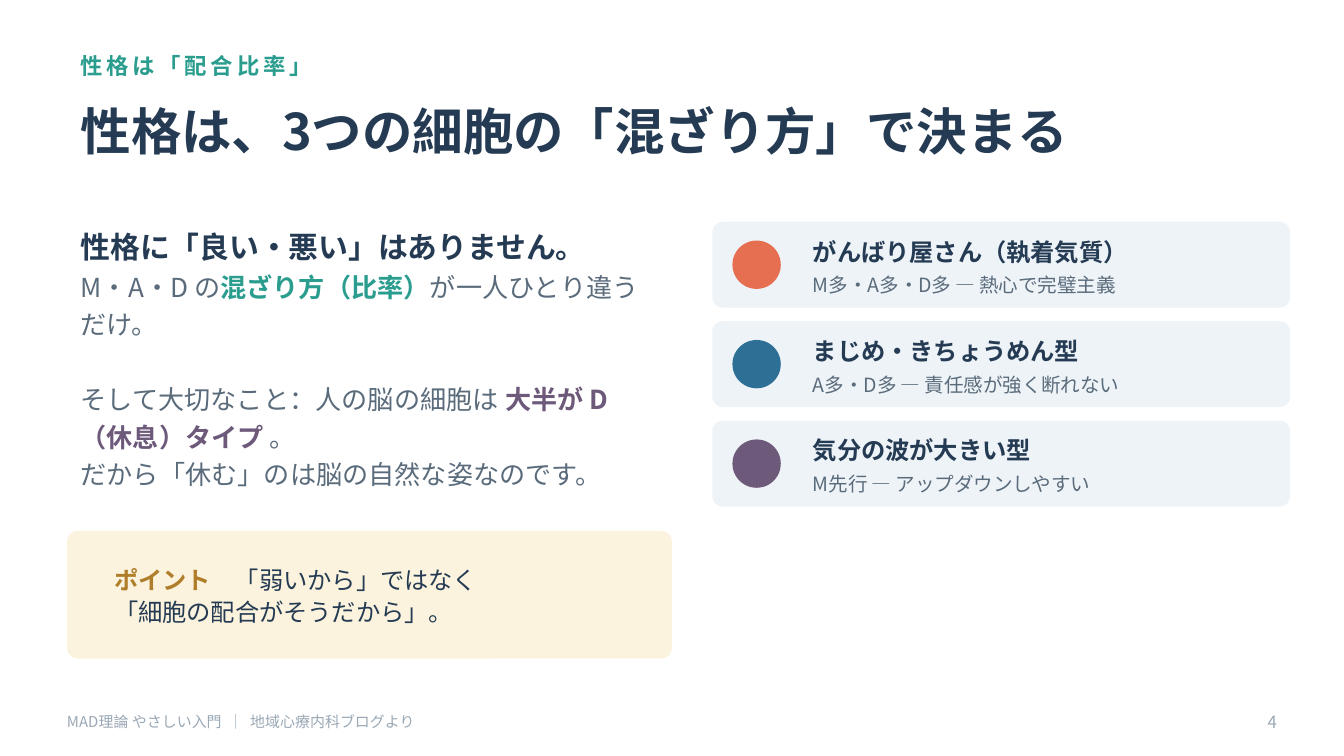
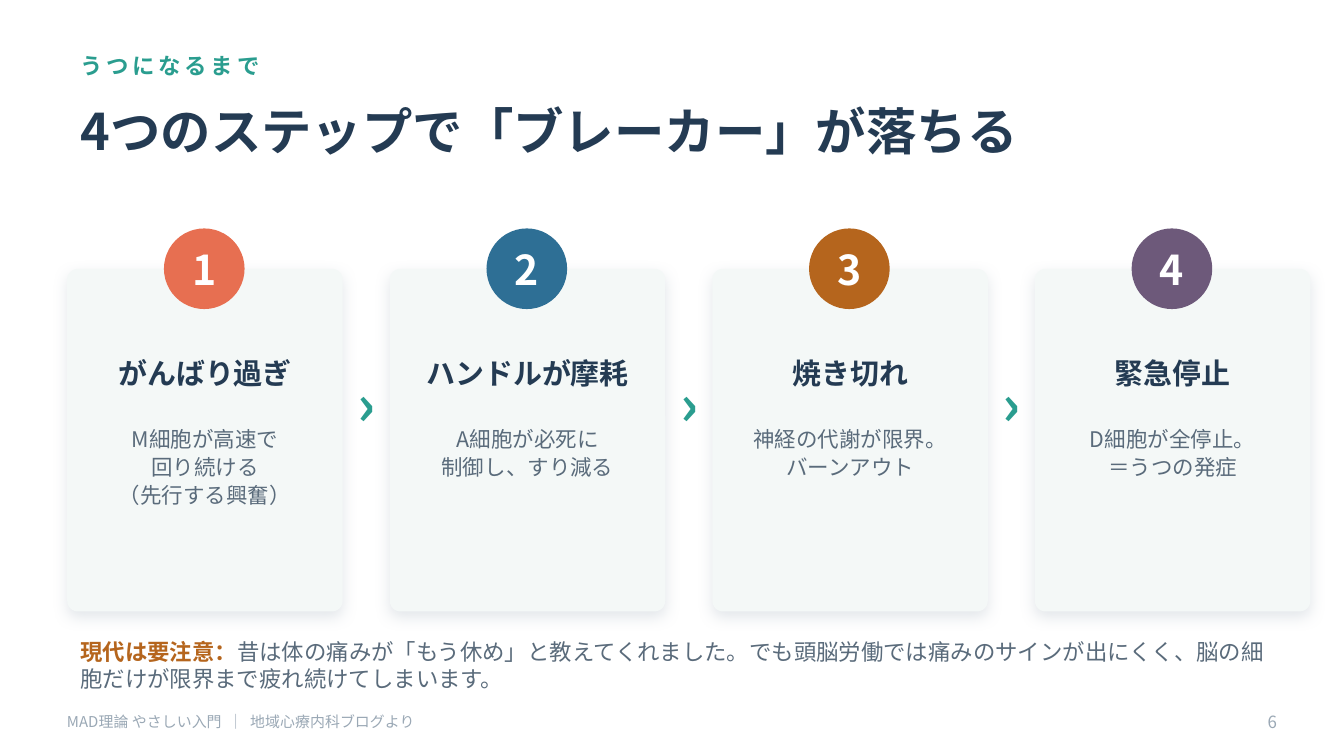
from dataclasses import dataclass

from lxml.etree import SubElement
from pptx import Presentation
from pptx.dml.color import RGBColor
from pptx.enum.shapes import MSO_SHAPE as SHAPE
from pptx.enum.text import MSO_ANCHOR as ANCHOR, MSO_AUTO_SIZE as AUTO, PP_ALIGN as ALIGN
from pptx.oxml.ns import qn
from pptx.util import Pt

# Shared look
FONT = "Noto Sans CJK JP"
NAVY = RGBColor(0x24, 0x3B, 0x53)
SLATE = RGBColor(0x5A, 0x6B, 0x7B)
MUTED = RGBColor(0x9A, 0xA8, 0xB5)
TEAL = RGBColor(0x2A, 0x9D, 0x8F)
CORAL = RGBColor(0xE7, 0x6F, 0x51)
BLUE = RGBColor(0x2E, 0x6F, 0x95)
PURPLE = RGBColor(0x6D, 0x59, 0x7A)
BROWN = RGBColor(0xB5, 0x65, 0x1D)
GOLD = RGBColor(0xB0, 0x7D, 0x2B)
CREAM = RGBColor(0xFB, 0xF3, 0xDD)
ICE = RGBColor(0xEE, 0xF3, 0xF8)
MIST = RGBColor(0xF4, 0xF8, 0xF7)
WHITE = RGBColor(0xFF, 0xFF, 0xFF)

FOOTER = "MAD理論 やさしい入門  ｜  地域心療内科ブログより"
TITLE_ONLY, TITLE_AND_BODY = 5, 1
MARGIN = 36
RADIUS = 7.2


@dataclass(frozen=True)
class Style:
    size: float
    color: RGBColor
    bold: bool = False
    tracking: int = 0


KICKER = Style(12, TEAL, True, 200)
TITLE = Style(27, NAVY, True)
BODY = Style(14, SLATE)


# Text
def format_run(r, style):
    r.font.name = FONT
    r.font.size = Pt(style.size)
    r.font.bold = style.bold
    r.font.color.rgb = style.color
    rPr = r.font._element
    SubElement(rPr, qn("a:ea")).set("typeface", FONT)
    if style.tracking:
        rPr.set("spc", str(style.tracking))


def write(tf, paragraphs, align=ALIGN.LEFT, anchor=ANCHOR.MIDDLE, spacing=1.0):
    """Fill a frame; every paragraph is a list of (text, style) runs."""
    tf.word_wrap = True
    tf.auto_size = AUTO.NONE
    tf.vertical_anchor = anchor
    for i, runs in enumerate(paragraphs):
        p = tf.paragraphs[0] if i == 0 else tf.add_paragraph()
        p.alignment = align
        p.line_spacing = spacing
        for text, style in runs:
            r = p.add_run()
            r.text = text
            format_run(r, style)


def place(sp, left, top, width, height):
    sp.left, sp.top, sp.width, sp.height = Pt(left), Pt(top), Pt(width), Pt(height)


def add_text(slide, box, paragraphs, **layout):
    sp = slide.shapes.add_textbox(*map(Pt, box))
    write(sp.text_frame, paragraphs, **layout)


def add_line(slide, box, text, style, **layout):
    add_text(slide, box, [[(text, style)]], **layout)


# Shapes
def add_filled(slide, kind, box, color):
    sp = slide.shapes.add_shape(kind, *map(Pt, box))
    sp.shadow.inherit = False
    sp.fill.solid()
    sp.fill.fore_color.rgb = color
    sp.line.fill.background()
    return sp


def add_panel(slide, box, color):
    sp = add_filled(slide, SHAPE.ROUNDED_RECTANGLE, box, color)
    sp.adjustments[0] = RADIUS / min(box[2:]) * 0.8
    return sp


def add_soft_shadow(sp):
    effects = sp._element.spPr.find(qn("a:effectLst"))
    shadow = SubElement(effects, qn("a:outerShdw"), blurRad=str(Pt(8)), dist=str(Pt(3)),
                        dir="5400000", algn="ctr", rotWithShape="0")
    color = SubElement(shadow, qn("a:srgbClr"), val=str(MUTED))
    SubElement(color, qn("a:alpha"), val="28000")


def add_badge(slide, left, top, number, color):
    sp = add_filled(slide, SHAPE.OVAL, (left, top, 43.2, 43.2), color)
    tf = sp.text_frame
    tf.margin_left = tf.margin_right = tf.margin_top = tf.margin_bottom = 0
    write(tf, [[(str(number), Style(22, WHITE, True))]], align=ALIGN.CENTER)


# Frame of every slide
def add_slide(prs, layout, kicker, title, number):
    slide = prs.slides.add_slide(prs.slide_layouts[layout])
    place(slide.shapes.title, MARGIN, 44.64, 648, 50.4)
    write(slide.shapes.title.text_frame, [[(title, TITLE)]])
    add_line(slide, (MARGIN, 24.48, 648, 21.6), kicker, KICKER)
    add_line(slide, (28.8, 375.84, 540, 21.6), FOOTER, Style(8, MUTED))
    add_line(slide, (655.2, 375.84, 36, 21.6), str(number), Style(9, MUTED), align=ALIGN.RIGHT)
    return slide


def fill_body(slide, paragraphs, box):
    body = slide.placeholders[1]
    place(body, *box)
    write(body.text_frame, paragraphs, anchor=ANCHOR.TOP, spacing=1.2)
    for p in body.text_frame.paragraphs:
        p.space_before = Pt(0)
        pPr = p._p.get_or_add_pPr()
        pPr.set("marL", "0")
        pPr.set("indent", "0")
        SubElement(pPr, qn("a:buNone"))
    return body.text_frame


# Slide parts
def add_type_card(slide, top, color, name, mix):
    add_panel(slide, (381.6, top, 309.6, 46.08), ICE)
    add_filled(slide, SHAPE.OVAL, (392.4, top + 10.08, 25.92, 25.92), color)
    add_line(slide, (428.4, top + 4.32, 255.6, 23.04), name, Style(13, NAVY, True))
    add_line(slide, (428.4, top + 24.48, 255.6, 18.72), mix, Style(10.5, SLATE))


def add_step_card(slide, left, number, color, heading, lines):
    add_soft_shadow(add_panel(slide, (left, 144, 147.6, 183.6), MIST))
    add_badge(slide, left + 51.84, 122.4, number, color)
    add_line(slide, (left + 7.2, 180, 133.2, 39.6), heading, Style(15.5, NAVY, True),
             align=ALIGN.CENTER)
    add_text(slide, (left + 8.64, 223.2, 130.32, 86.4),
             [[(line, Style(11.5, SLATE))] for line in lines],
             align=ALIGN.CENTER, anchor=ANCHOR.TOP, spacing=1.1)


def build_types_slide(prs):
    slide = add_slide(prs, TITLE_AND_BODY, "性格は「配合比率」",
                      "性格は、3つの細胞の「混ざり方」で決まる", 4)
    tf = fill_body(slide, [
        [("性格に「良い・悪い」はありません。", Style(16, NAVY, True))],
        [("M・A・D の", BODY), ("混ざり方（比率）", Style(14, TEAL, True)),
         ("が一人ひとり違うだけ。", BODY)],
        [("そして大切なこと：人の脳の細胞は ", BODY),
         ("大半が D（休息）タイプ", Style(14, PURPLE, True)), (" 。", BODY)],
        [("だから「休む」のは脳の自然な姿なのです。", BODY)],
    ], (MARGIN, 115.2, 324, 144))
    tf.paragraphs[2].space_before = Pt(20)

    types = [
        (CORAL, "がんばり屋さん（執着気質）", "M多・A多・D多 ― 熱心で完璧主義"),
        (BLUE, "まじめ・きちょうめん型", "A多・D多 ― 責任感が強く断れない"),
        (PURPLE, "気分の波が大きい型", "M先行 ― アップダウンしやすい"),
    ]
    for i, card in enumerate(types):
        add_type_card(slide, 118.8 + i * 53.28, *card)

    # Key point
    plain = Style(13, NAVY)
    add_panel(slide, (MARGIN, 284.4, 324, 68.4), CREAM)
    add_text(slide, (54, 291.6, 291.6, 54), [
        [("ポイント　", Style(13, GOLD, True)), ("「弱いから」ではなく", plain)],
        [("「細胞の配合がそうだから」。", plain)],
    ], spacing=1.1)


def build_steps_slide(prs):
    slide = add_slide(prs, TITLE_ONLY, "うつになるまで",
                      "4つのステップで「ブレーカー」が落ちる", 6)
    steps = [
        (CORAL, "がんばり過ぎ", ["M細胞が高速で", "回り続ける", "（先行する興奮）"]),
        (BLUE, "ハンドルが摩耗", ["A細胞が必死に", "制御し、すり減る"]),
        (BROWN, "焼き切れ", ["神経の代謝が限界。", "バーンアウト"]),
        (PURPLE, "緊急停止", ["D細胞が全停止。", "＝うつの発症"]),
    ]
    for i, step in enumerate(steps):
        left = MARGIN + i * 172.8
        add_step_card(slide, left, i + 1, *step)
        if i < len(steps) - 1:
            add_line(slide, (left + 145.44, 183.6, 30.24, 64.8), "›", Style(30, TEAL, True),
                     align=ALIGN.CENTER)

    # Warning
    add_text(slide, (MARGIN, 338.4, 655.2, 36), [[
        ("現代は要注意：", Style(12, BROWN, True)),
        ("昔は体の痛みが「もう休め」と教えてくれました。でも頭脳労働では痛みのサインが出にくく、"
         "脳の細胞だけが限界まで疲れ続けてしまいます。", Style(12, SLATE)),
    ]])


def main():
    prs = Presentation()
    prs.slide_width, prs.slide_height = Pt(720), Pt(405)
    build_types_slide(prs)
    build_steps_slide(prs)
    prs.save("out.pptx")


if __name__ == "__main__":
    main()
